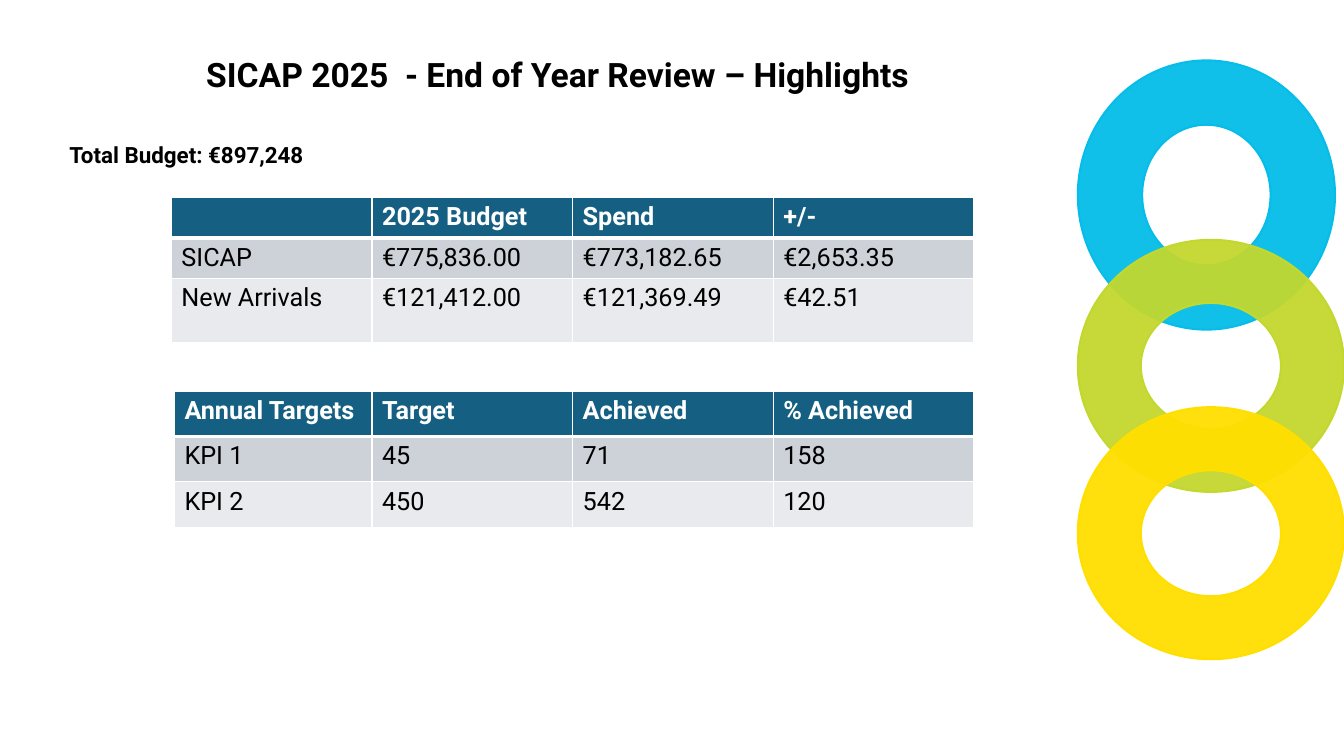
import pptx
import pptx.util
import pptx.dml.color
import pptx.enum.shapes
import pptx.enum.text
import pptx.oxml
import pptx.oxml.ns
from pptx.util import Inches

FONT = "Roboto"


def color(hex_code):
    return pptx.dml.color.RGBColor.from_string(hex_code)


def format_text(para, size, hex_code, bold):
    for span in para.runs:
        span.font.name = FONT
        span.font.size = pptx.util.Pt(size)
        span.font.bold = bold
        span.font.color.rgb = color(hex_code)


deck = pptx.Presentation()
deck.slide_width = Inches(13.33)
deck.slide_height = Inches(7.5)
page = deck.slides.add_slide(deck.slide_layouts[6])

# Chain of translucent rings
rings = [
    (0.6, 2.55, 2.67, "05BDE8"),
    (2.38, 2.64, 2.5, "C3D82F"),
    (4.04, 2.64, 2.5, "FFDF00"),
]
for top, width, height, hex_code in rings:
    ring = page.shapes.add_shape(
        pptx.enum.shapes.MSO_SHAPE.DONUT,
        Inches(10.69), Inches(top), Inches(width), Inches(height))
    ring.shadow.inherit = False
    ring.fill.solid()
    ring.fill.fore_color.rgb = color(hex_code)
    ring.line.color.rgb = color(hex_code)
    ring.line.width = pptx.util.Pt(1.5)
    fill_color = ring.fill._xPr.find(pptx.oxml.ns.qn("a:solidFill"))[0]
    fill_color.append(pptx.oxml.parse_xml(
        f'<a:alpha {pptx.oxml.ns.nsdecls("a")} val="95000"/>'))

# Title and total budget
box = page.shapes.add_textbox(Inches(0.59), Inches(0.49), Inches(9.88), Inches(1.65))
box.text_frame.word_wrap = True
title = box.text_frame.paragraphs[0]
title.text = "SICAP 2025  - End of Year Review – Highlights"
title.alignment = pptx.enum.text.PP_ALIGN.CENTER
format_text(title, 24, "000000", True)
budget = box.text_frame.add_paragraph()
budget.text = "Total Budget: €897,248"
budget.space_before = pptx.util.Pt(33)
format_text(budget, 16, "000000", True)

# Budget and target tables: left, top, column widths, row heights, rows
tables = [
    (1.7, 1.96, [1.99] * 4, [0.37, 0.37, 0.64], [
        ["", "2025 Budget", "Spend", "+/-"],
        ["SICAP", "€775,836.00", "€773,182.65", "€2,653.35"],
        ["New Arrivals", "€121,412.00", "€121,369.49", "€42.51"],
    ]),
    (1.73, 3.88, [1.96] + [1.99] * 3, [0.45] * 3, [
        ["Annual Targets", "Target", "Achieved", "% Achieved"],
        ["KPI 1", "45", "71", "158"],
        ["KPI 2", "450", "542", "120"],
    ]),
]
row_fills = ["156082", "CCD2D8", "E8EAED"]
for left, top, widths, heights, rows in tables:
    grid = page.shapes.add_table(
        len(rows), len(widths), Inches(left), Inches(top),
        Inches(sum(widths)), Inches(sum(heights))).table
    for column, width in zip(grid.columns, widths):
        column.width = Inches(width)
    for r, values in enumerate(rows):
        grid.rows[r].height = Inches(heights[r])
        for c, value in enumerate(values):
            cell = grid.cell(r, c)
            # White borders, with a thicker rule below the header
            for side in "LRTB":
                thick = (r, side) in [(0, "B"), (1, "T")]
                cell._tc.get_or_add_tcPr().append(pptx.oxml.parse_xml(
                    f'<a:ln{side} {pptx.oxml.ns.nsdecls("a")} w="{38100 if thick else 12700}">'
                    '<a:solidFill><a:srgbClr val="FFFFFF"/></a:solidFill>'
                    f'</a:ln{side}>'))
            cell.fill.solid()
            cell.fill.fore_color.rgb = color(row_fills[r])
            cell.text_frame.text = value
            format_text(cell.text_frame.paragraphs[0], 18,
                        "FFFFFF" if r == 0 else "000000", r == 0)

deck.save("out.pptx")
